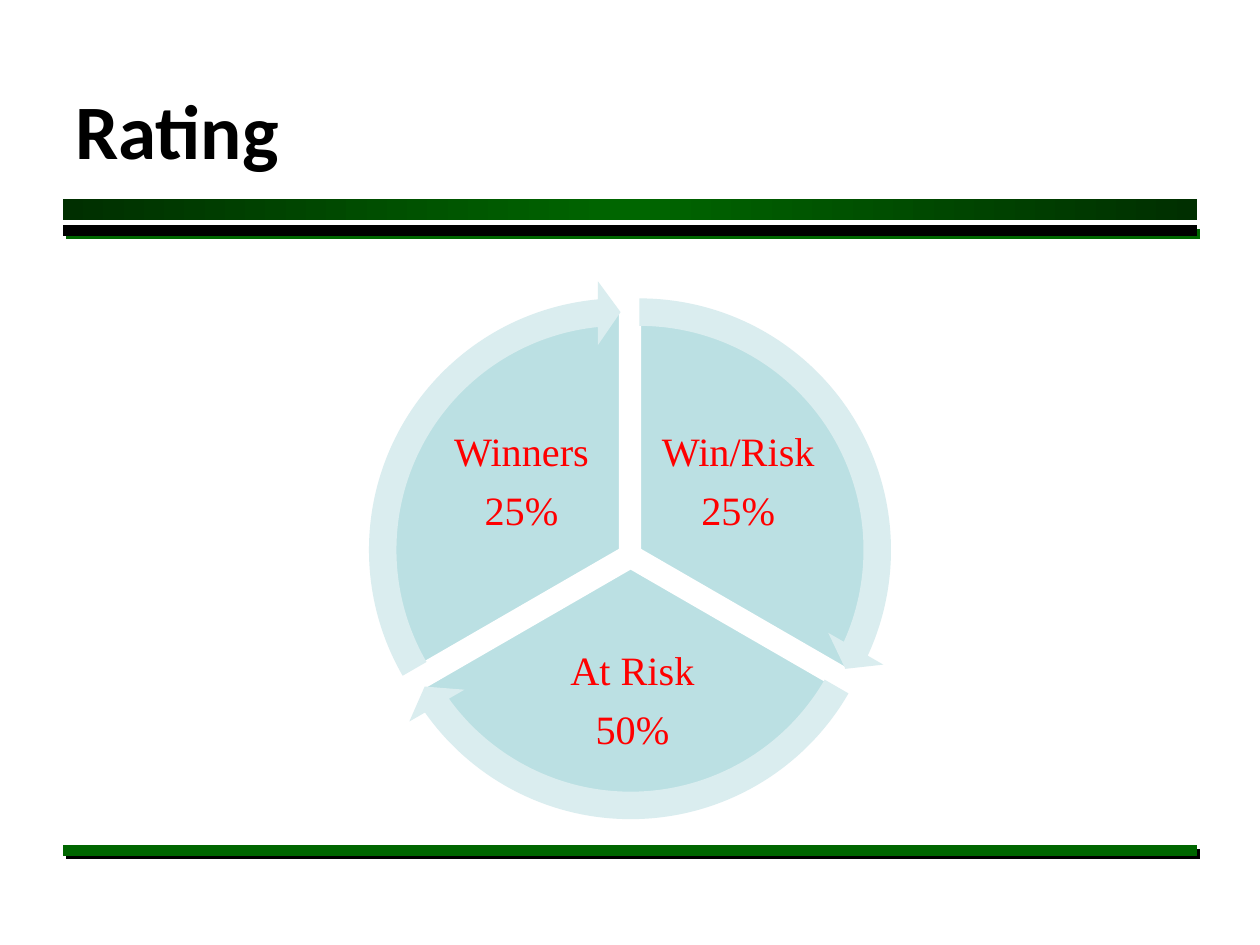
from copy import deepcopy

from lxml.etree import SubElement
from pptx import Presentation
from pptx.dml.color import RGBColor
from pptx.enum.shapes import MSO_CONNECTOR, MSO_SHAPE
from pptx.enum.text import MSO_ANCHOR, PP_ALIGN
from pptx.oxml.ns import qn
from pptx.util import Inches, Pt

COLORS = {
    "black": "000000", "green": "006600", "dark": "002F00",
    "wedge": "BBE0E3", "arrow": "DAEDEF", "white": "FFFFFF", "red": "FF0000",
}
PIE, RING = 3.81, 4.28  # diameters

# Pie left and top, start and end angle; label lines and box; arrow end and start
PARTS = [
    ((3.17, 2.46), (162, 18), ("Win/Risk", "25%"), (5.18, 3.27, 1.36, 1.13), (14.725, 161.994)),
    ((3.1, 2.6), (18, 90), ("At Risk", "50%"), (4, 5.07, 2.04, 1), (86.72, 18.005)),
    ((3.02, 2.46), (90, 162), ("Winners", "25%"), (3.46, 3.27, 1.36, 1.13), (158.73, 90)),
]


def color(name):
    return RGBColor.from_string(COLORS[name])


def add_shape(slide, kind, box, adjust=(), fill=None, line=None):
    shape = slide.shapes.add_shape(kind, *map(Inches, box))
    shape.shadow.inherit = False
    for i, value in enumerate(adjust):
        shape.adjustments[i] = value
    if fill:
        shape.fill.solid()
        shape.fill.fore_color.rgb = color(fill)
    if line:
        shape.line.color.rgb = color(line)
        shape.line.width = Pt(2)
    else:
        shape.line.fill.background()
    return shape


def add_band(slide, box):
    """Bar that is dark at both ends and green in the middle."""
    fill = add_shape(slide, MSO_SHAPE.RECTANGLE, box).fill
    fill.gradient()
    fill.gradient_angle = 0
    stops = fill.gradient_stops
    last = stops[-1]._gs
    last.addnext(deepcopy(last))
    for stop, place, name in zip(fill.gradient_stops, (0, 0.5, 1), ("dark", "green", "dark")):
        stop.position = place
        stop.color.rgb = color(name)


def add_rule(slide, top, name, shade):
    """Thick line with a hard shadow to the lower right."""
    rule = slide.shapes.add_connector(
        MSO_CONNECTOR.STRAIGHT, Inches(0.5), Inches(top), Inches(9.5), Inches(top))
    rule.line.color.rgb = color(name)
    rule.line.width = Pt(6)
    effects = SubElement(rule._element.spPr, qn("a:effectLst"))
    shadow = SubElement(effects, qn("a:outerShdw"), blurRad="0", dist=str(Pt(2.8)),
                        dir="2700000", algn="ctr", rotWithShape="0")
    SubElement(shadow, qn("a:srgbClr"), val=COLORS[shade])


def add_text(slide, box, lines, size, face, name, inset, bold=False):
    frame = slide.shapes.add_textbox(*map(Inches, box)).text_frame
    frame.word_wrap = True
    frame.vertical_anchor = MSO_ANCHOR.MIDDLE
    if inset:
        frame.margin_left = frame.margin_right = Inches(inset)
        frame.margin_top = frame.margin_bottom = Inches(inset)
    frame.text = "\n".join(lines)
    for para in frame.paragraphs:
        font = para.font
        font.size, font.name, font.bold = Pt(size), face, bold
        font.color.rgb = color(name)
    return frame


def add_label(slide, box, lines):
    frame = add_text(slide, box, lines, 23, "Times New Roman", "red", 0.03)
    for para in frame.paragraphs:
        para.alignment = PP_ALIGN.CENTER
        para.line_spacing = 0.9
        para.space_after = Pt(9)


def main():
    deck = Presentation()
    deck.slide_width, deck.slide_height = Inches(10), Inches(7.5)
    slide = deck.slides.add_slide(deck.slide_layouts[6])

    # Frame and title
    add_band(slide, (0.5, 1.58, 9, 0.17))
    add_rule(slide, 1.83, "black", "green")
    add_rule(slide, 6.75, "green", "black")
    add_text(slide, (0.5, 0.5, 9, 1.05), ["Rating"], 44, "Calibri", "black", None, bold=True)

    # Wedges with labels
    for spot, angles, lines, box, _ in PARTS:
        add_shape(slide, MSO_SHAPE.PIE, (*spot, PIE, PIE), angles, "wedge", "white")
        add_label(slide, box, lines)

    # Arrows, each centred on its wedge
    edge = (RING - PIE) / 2
    for (left, top), _, _, _, (end, start) in PARTS:
        add_shape(slide, MSO_SHAPE.CIRCULAR_ARROW, (left - edge, top - edge, RING, RING),
                  (0.051, 3.275, end, start, 0.059), "arrow")

    deck.save("out.pptx")


if __name__ == "__main__":
    main()
